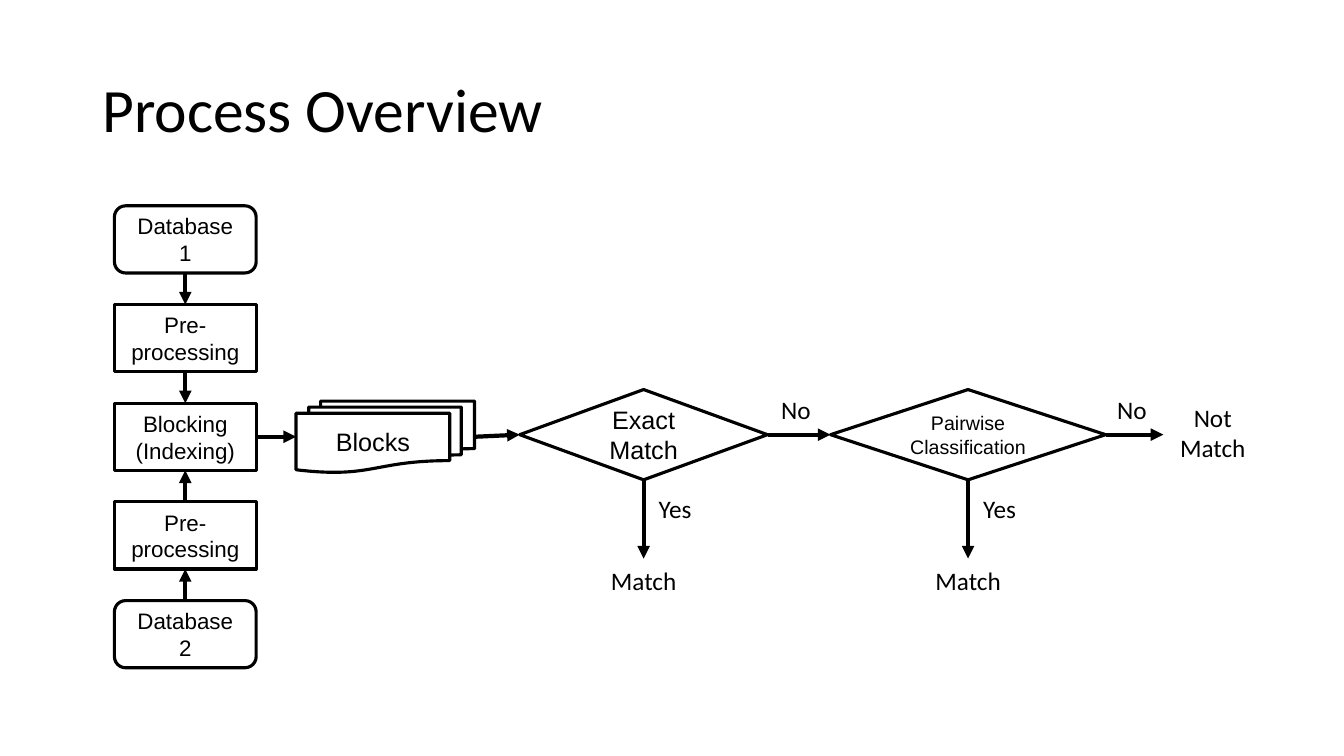
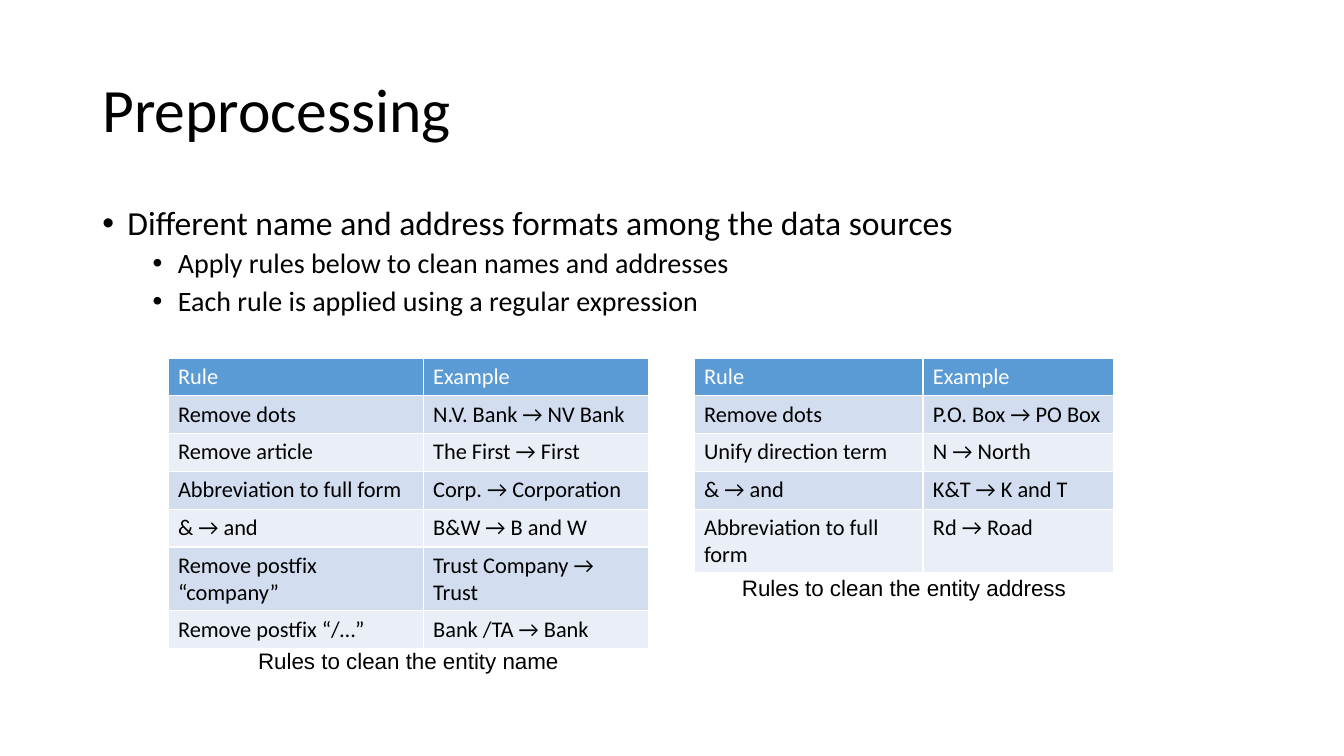
from lxml import etree
from pptx import Presentation
from pptx.dml.color import RGBColor
from pptx.enum.shapes import MSO_CONNECTOR, MSO_SHAPE
from pptx.enum.text import MSO_ANCHOR, PP_ALIGN
from pptx.oxml.ns import qn
from pptx.util import Emu, Pt

BLACK = RGBColor(0x00, 0x00, 0x00)
WHITE = RGBColor(0xFF, 0xFF, 0xFF)
HEADER_BLUE = RGBColor(0x5B, 0x9B, 0xD5)
BAND_DARK = RGBColor(0xD2, 0xDE, 0xEF)
BAND_LIGHT = RGBColor(0xEA, 0xEF, 0xF7)

RECTANGLE = MSO_SHAPE.RECTANGLE
DATABASE = MSO_SHAPE.FLOWCHART_ALTERNATE_PROCESS
DOCUMENTS = MSO_SHAPE.FLOWCHART_MULTIDOCUMENT
DECISION = MSO_SHAPE.DIAMOND
STRAIGHT = MSO_CONNECTOR.STRAIGHT
TOP, MIDDLE = MSO_ANCHOR.TOP, MSO_ANCHOR.MIDDLE
LEFT, CENTER = PP_ALIGN.LEFT, PP_ALIGN.CENTER
UP, DOWN, RIGHT = 0, 2, 3  # connection sites

BODY_FONT, DIAGRAM_FONT = "Calibri", "Arial"
PAGE_WIDTH, PAGE_HEIGHT = 1280, 720
MARGIN, CONTENT_WIDTH = 88, 1104
ROW_HEIGHT = 36


def px(length):
    return Emu(length * 9525)


class SlideWriter:
    def __init__(self):
        self.deck = Presentation()
        self.deck.slide_width = px(PAGE_WIDTH)
        self.deck.slide_height = px(PAGE_HEIGHT)
        self.page = None

    def new_page(self, title):
        self.page = self.deck.slides.add_slide(self.deck.slide_layouts[6])
        box = self.text(title, MARGIN, 38, CONTENT_WIDTH, 139, 44, align=LEFT)
        box.text_frame.vertical_anchor = MIDDLE
        box.text_frame.paragraphs[0].line_spacing = 0.9

    def style(self, para, size, font=BODY_FONT, color=BLACK, align=LEFT):
        para.alignment = align
        para.font.name = font
        para.font.size = Pt(size)
        para.font.bold = False
        para.font.color.rgb = color

    def fill_text(self, frame, text, size, font, align, anchor):
        frame.word_wrap = True
        frame.vertical_anchor = anchor
        frame.text = text
        for para in frame.paragraphs:
            self.style(para, size, font, align=align)

    def text(self, text, left, top, width, height, size=18,
             font=BODY_FONT, align=CENTER):
        box = self.page.shapes.add_textbox(px(left), px(top), px(width), px(height))
        self.fill_text(box.text_frame, text, size, font, align, TOP)
        return box

    def node(self, kind, text, left, top, width, height, size):
        shape = self.page.shapes.add_shape(
            kind, px(left), px(top), px(width), px(height))
        shape.shadow.inherit = False
        shape.line.color.rgb = BLACK
        shape.line.width = Pt(2.25)
        frame = shape.text_frame
        if kind == DECISION:
            shape.fill.background()
        else:
            shape.fill.solid()
            shape.fill.fore_color.rgb = WHITE
            frame.margin_left = frame.margin_right = px(14)
            frame.margin_top = frame.margin_bottom = px(7)
        self.fill_text(frame, text, size, DIAGRAM_FONT, CENTER, MIDDLE)
        return shape

    def arrow(self, source, side, target=None, point=(0, 0)):
        """Lead from a side of source to the facing side of target, or to a point."""
        x, y = point
        line = self.page.shapes.add_connector(STRAIGHT, 0, 0, px(x), px(y))
        line.begin_connect(source, side)
        if target is not None:
            line.end_connect(target, (side + 2) % 4)
        line.line.color.rgb = BLACK
        line.line.width = Pt(3)
        properties = line.element.spPr
        etree.SubElement(properties.find(qn("a:ln")), qn("a:tailEnd"), type="triangle")
        etree.SubElement(properties, qn("a:effectLst"))

    def bullets(self, items, left, top, width, height):
        """Write (level, text) items as a bulleted list."""
        lines = "\n".join(text for _, text in items)
        box = self.text(lines, left, top, width, height, align=LEFT)
        for para, (level, _) in zip(box.text_frame.paragraphs, items):
            para.level = level
            para.line_spacing = 0.9
            para.space_before = Pt(5 if level else 10)
            para.font.size = Pt(20 if level else 24)
            properties = para._p.get_or_add_pPr()
            properties.set("marL", str(px(24 + 48 * level)))
            properties.set("indent", str(px(-24)))
            etree.SubElement(properties, qn("a:buFont"), typeface="Arial")
            bullet = etree.SubElement(properties, qn("a:buChar"), char="•")
            run_defaults = properties.find(qn("a:defRPr"))
            if run_defaults is not None:
                properties.append(run_defaults)
            assert bullet is not None

    def rule_table(self, rules, left, top, widths, caption, caption_top):
        rows = [("Rule", "Example")] + rules
        table = self.page.shapes.add_table(
            len(rows), len(widths), px(left), px(top),
            px(sum(widths)), px(ROW_HEIGHT * len(rows))).table
        for column, width in zip(table.columns, widths):
            column.width = px(width)
        for row_index, row in enumerate(rows):
            table.rows[row_index].height = px(ROW_HEIGHT)
            if row_index == 0:
                fill, color = HEADER_BLUE, WHITE
            else:
                fill, color = (BAND_DARK if row_index % 2 else BAND_LIGHT), BLACK
            for column_index, text in enumerate(row):
                cell = table.cell(row_index, column_index)
                cell.fill.solid()
                cell.fill.fore_color.rgb = fill
                cell.text = text
                self.style(cell.text_frame.paragraphs[0], 16, color=color)
        self.text(caption, left, caption_top, sum(widths), ROW_HEIGHT, 16, DIAGRAM_FONT)


def process_overview(writer):
    writer.new_page("Process Overview")
    steps = [
        (DATABASE, "Database 1"),
        (RECTANGLE, "Pre-\nprocessing"),
        (RECTANGLE, "Blocking\n(Indexing)"),
        (RECTANGLE, "Pre-\nprocessing"),
        (DATABASE, "Database 2"),
    ]
    first, clean_first, blocking, clean_second, second = [
        writer.node(kind, text, 109, 196 + 94 * index, 135, 64, 16)
        for index, (kind, text) in enumerate(steps)]
    blocks = writer.node(DOCUMENTS, "Blocks", 282, 382, 170, 68, 18)
    exact = writer.node(DECISION, "Exact Match", 495, 371, 236, 86, 18)
    pairwise = writer.node(DECISION, "Pairwise Classification", 791, 371, 262, 86, 14)

    for source, side, target in [
            (first, DOWN, clean_first), (clean_first, DOWN, blocking),
            (second, UP, clean_second), (clean_second, UP, blocking),
            (blocking, RIGHT, blocks), (blocks, RIGHT, exact),
            (exact, RIGHT, pairwise)]:
        writer.arrow(source, side, target)
    writer.arrow(pairwise, RIGHT, point=(1108, 414))

    label_width, label_height = 94, 38
    for decision, center, no_left in [(exact, 613, 711), (pairwise, 922, 1031)]:
        writer.arrow(decision, DOWN, point=(center, 532))
        left = center - label_width // 2
        for text, x, y in [("Match", left, 534), ("Yes", left + 30, 465),
                           ("No", no_left, 371)]:
            writer.text(text, x, y, label_width, label_height)
    writer.text("Not\nMatch", 1108, 378, label_width, 68)


def preprocessing(writer):
    writer.new_page("Preprocessing")
    writer.bullets([
        (0, "Different name and address formats among the data sources"),
        (1, "Apply rules below to clean names and addresses"),
        (1, "Each rule is applied using a regular expression"),
    ], MARGIN, 192, CONTENT_WIDTH, 140)
    writer.rule_table([
        ("Remove dots", "N.V. Bank → NV Bank"),
        ("Remove article", "The First → First"),
        ("Abbreviation to full form", "Corp. → Corporation"),
        ("& → and", "B&W → B and W"),
        ("Remove postfix “company”", "Trust Company → Trust"),
        ("Remove postfix “/…”", "Bank /TA → Bank"),
    ], 160, 341, (243, 215), "Rules to clean the entity name", 612)
    writer.rule_table([
        ("Remove dots", "P.O. Box → PO Box"),
        ("Unify direction term", "N → North"),
        ("& → and", "K&T → K and T"),
        ("Abbreviation to full form", "Rd → Road"),
    ], 661, 341, (218, 182), "Rules to clean the entity address", 542)


def main():
    writer = SlideWriter()
    process_overview(writer)
    preprocessing(writer)
    writer.deck.save("out.pptx")


if __name__ == "__main__":
    main()
